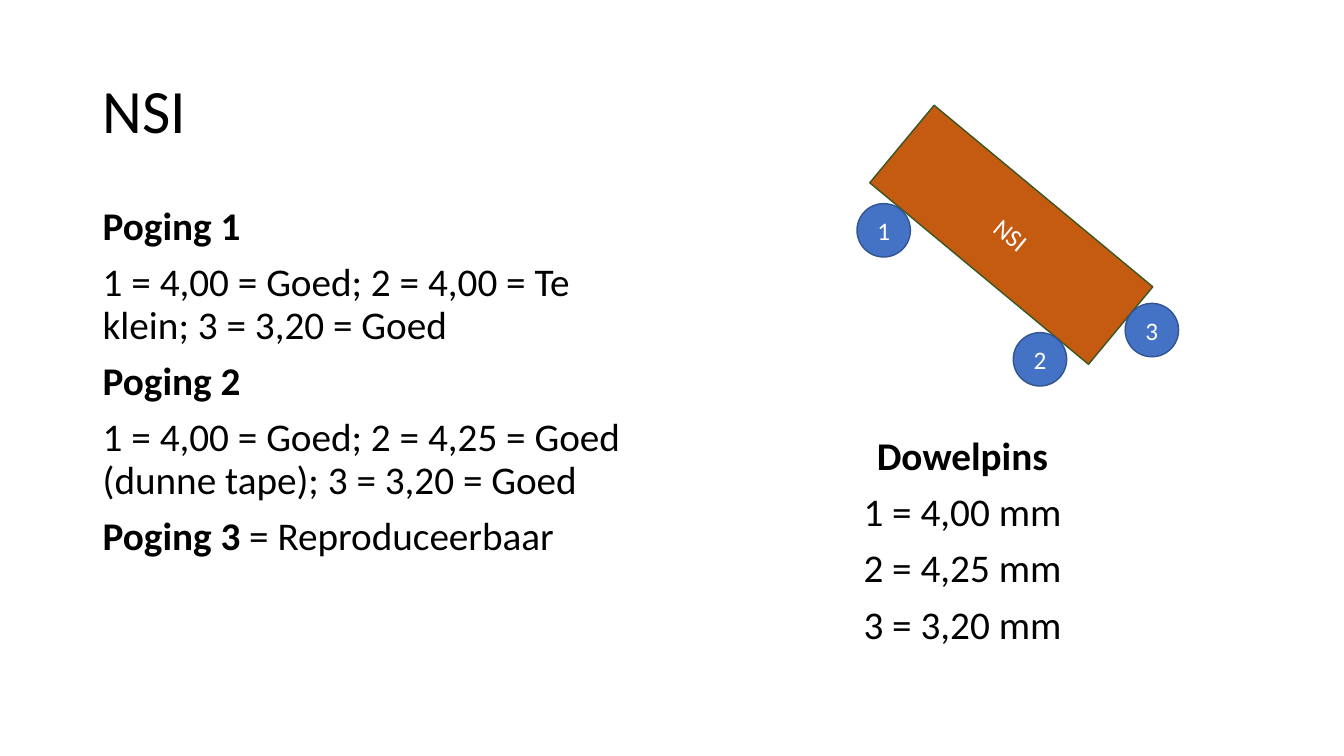
from pptx import Presentation
from pptx.dml.color import RGBColor
from pptx.enum.shapes import MSO_SHAPE
from pptx.enum.text import MSO_ANCHOR, PP_ALIGN
from pptx.util import Inches, Pt

RECT, OVAL = MSO_SHAPE.RECTANGLE, MSO_SHAPE.OVAL
TOP, MIDDLE = MSO_ANCHOR.TOP, MSO_ANCHOR.MIDDLE
LEFT, CENTER = PP_ALIGN.LEFT, PP_ALIGN.CENTER
FONT = "Calibri"
COLORS = {
    "text": "000000",
    "label": "FFFFFF",
    "block": "C55A11",
    "edge": "385723",
    "pin": "4472C4",
    "rim": "325491",
}
TRIALS = [
    [("Poging 1", True)],
    [("1 = 4,00 = Goed; 2 = 4,00 = Te klein; 3 = 3,20 = Goed", False)],
    [("Poging 2", True)],
    [("1 = 4,00 = Goed; 2 = 4,25 = Goed (dunne tape); 3 = 3,20 = Goed", False)],
    [("Poging 3 ", True), ("= Reproduceerbaar", False)],
]
SIZES = [
    [("Dowelpins", True)],
    [("1 = 4,00 mm", False)],
    [("2 = 4,25 mm", False)],
    [("3 = 3,20 mm", False)],
]
PINS = [("3", 2.66, 1.18), ("1", 0, 0.19), ("2", 1.55, 1.47)]


def color(name):
    return RGBColor.from_string(COLORS[name])


def write(frame, lines, size=28, tint="text", align=LEFT, anchor=TOP,
          spacing=0.9, gap=10):
    frame.word_wrap = True
    frame.vertical_anchor = anchor
    for i, line in enumerate(lines):
        para = frame.paragraphs[0] if i == 0 else frame.add_paragraph()
        para.alignment = align
        para.line_spacing = spacing
        para.space_before = Pt(gap if i else 0)
        for text, bold in line:
            run = para.add_run()
            run.text = text
            run.font.name = FONT
            run.font.size = Pt(size)
            run.font.bold = bold
            run.font.color.rgb = color(tint)


def add_text(slide, box, lines, **style):
    area = slide.shapes.add_textbox(*map(Inches, box))
    write(area.text_frame, lines, **style)


def add_part(group, kind, box, label, fill, line):
    part = group.shapes.add_shape(kind, *map(Inches, box))
    part.shadow.inherit = False
    part.fill.solid()
    part.fill.fore_color.rgb = color(fill)
    part.line.color.rgb = color(line)
    part.line.width = Pt(1)
    write(part.text_frame, [[(label, False)]], size=18, tint="label",
          align=CENTER, anchor=MIDDLE, spacing=1.0)
    return part


def add_setup(slide, left, top):
    group = slide.shapes.add_group_shape()
    block = add_part(group, RECT, (left + 0.12, top, 2.82, 1),
                     "NSI", "block", "edge")
    block.rotation = 39.7
    for label, x, y in PINS:
        add_part(group, OVAL, (left + x, top + y, 0.53, 0.53),
                 label, "pin", "rim")


def main():
    deck = Presentation()
    deck.slide_width, deck.slide_height = Inches(13.33), Inches(7.5)
    slide = deck.slides.add_slide(deck.slide_layouts[6])
    add_text(slide, (0.92, 0.4, 11.5, 1.45), [[("NSI", False)]],
             size=44, anchor=MIDDLE)
    add_text(slide, (0.92, 2, 5.75, 4.76), TRIALS)
    add_setup(slide, 8.5, 1.83)
    add_text(slide, (6.67, 4.28, 5.75, 2.58), SIZES, align=CENTER)
    deck.save("out.pptx")


if __name__ == "__main__":
    main()
